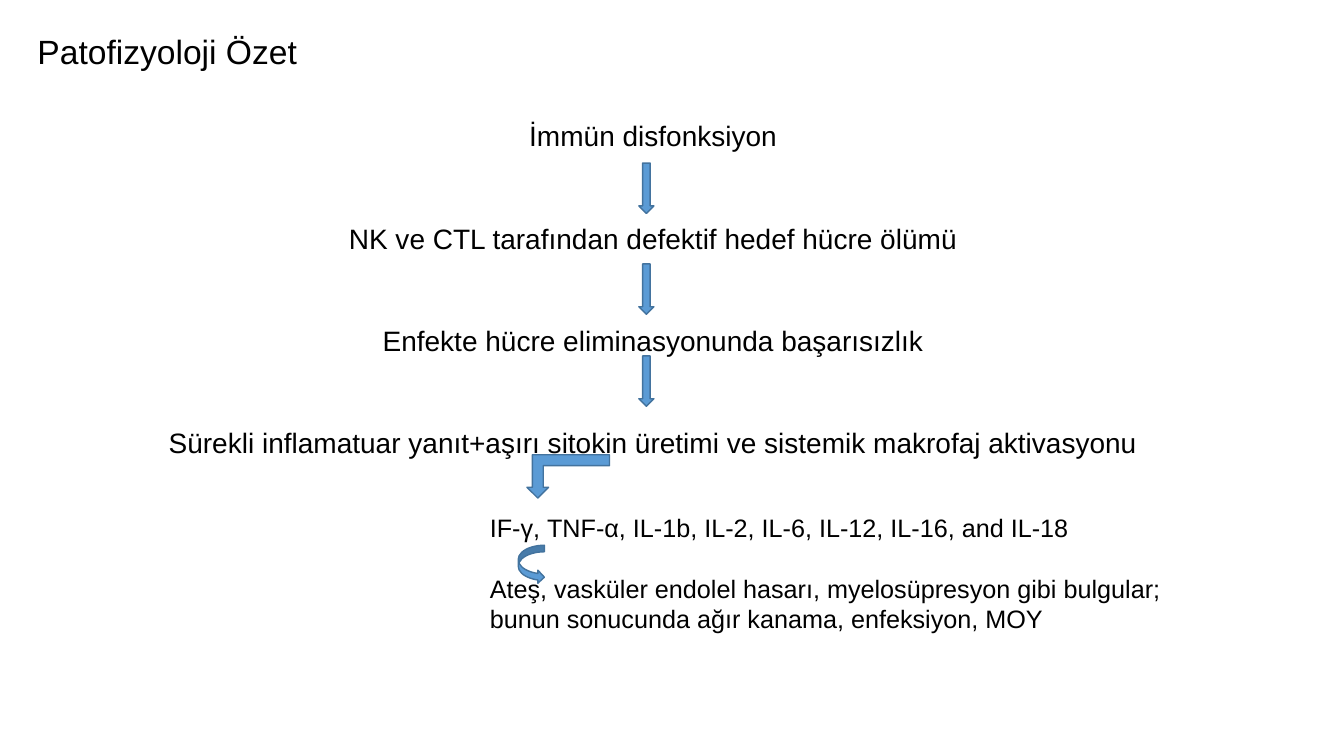
"""Build the pathophysiology summary slide as a chain of steps joined by block arrows."""
import dataclasses

import pptx
import pptx.dml.color
import pptx.enum.shapes
import pptx.enum.text
import pptx.oxml.ns
import pptx.util
from lxml import etree

Cm = pptx.util.Cm
Pt = pptx.util.Pt
RGB = pptx.dml.color.RGBColor
ALIGN = pptx.enum.text.PP_ALIGN
ARROW = pptx.enum.shapes.MSO_SHAPE


@dataclasses.dataclass(frozen=True)
class Theme:
    font: str = "Arial"
    ink: RGB = RGB(0x00, 0x00, 0x00)
    arrow_fill: RGB = RGB(0x5B, 0x9B, 0xD5)
    arrow_line: RGB = RGB(0x43, 0x73, 0x9E)
    title_size: int = 24
    step_size: int = 20
    detail_size: int = 18


theme = Theme()


def write(holder, lines, box, size, align=ALIGN.LEFT, gap=0):
    holder.left, holder.top, holder.width, holder.height = [Cm(v) for v in box]
    frame = holder.text_frame
    frame.text = "\n".join(lines)
    frame.word_wrap = True
    frame.auto_size = pptx.enum.text.MSO_AUTO_SIZE.NONE
    frame.vertical_anchor = pptx.enum.text.MSO_ANCHOR.TOP
    for number, paragraph in enumerate(frame.paragraphs):
        paragraph.alignment = align
        paragraph.space_before = Pt(gap if number else 0)
        paragraph.font.name = theme.font
        paragraph.font.size = Pt(size)
        paragraph.font.color.rgb = theme.ink
        properties = paragraph._p.get_or_add_pPr()
        properties.set("marL", "0")
        properties.set("indent", "0")
        no_bullet = etree.Element(pptx.oxml.ns.qn("a:buNone"))
        properties.insert_element_before(no_bullet, "a:tabLst", "a:defRPr", "a:extLst")


presentation = pptx.Presentation()
presentation.slide_width = Cm(33.87)
presentation.slide_height = Cm(19.05)
slide = presentation.slides.add_slide(presentation.slide_layouts.get_by_name("Two Content"))
heading, steps, findings = slide.placeholders

write(heading, ["Patofizyoloji Özet"], (0.69, 0.64, 31.6, 1.27), theme.title_size)
write(
    steps,
    [
        "İmmün disfonksiyon",
        "NK ve CTL tarafından defektif hedef hücre ölümü",
        "Enfekte hücre eliminasyonunda başarısızlık",
        "Sürekli inflamatuar yanıt+aşırı sitokin üretimi ve sistemik makrofaj aktivasyonu",
    ],
    (0.86, 2.87, 31.2, 9.65),
    theme.step_size,
    align=ALIGN.CENTER,
    gap=49,
)
write(
    findings,
    [
        "IF-γ, TNF-α, IL-1b, IL-2, IL-6, IL-12, IL-16, and IL-18",
        "Ateş, vasküler endolel hasarı, myelosüpresyon gibi bulgular; "
        "bunun sonucunda ağır kanama, enfeksiyon, MOY",
    ],
    (12.09, 12.78, 19.35, 4.11),
    theme.detail_size,
    gap=22,
)

arrows = [(ARROW.DOWN_ARROW, 16.1, top, 0.38, 1.27, 0) for top in (4.11, 6.65, 8.97)]
arrows += [
    (ARROW.BENT_UP_ARROW, 13.28, 11.46, 2.08, 1.09, 180),
    (ARROW.CURVED_RIGHT_ARROW, 13.06, 13.74, 0.66, 0.97, 0),
]
for kind, left, top, width, height, turn in arrows:
    arrow = slide.shapes.add_shape(kind, Cm(left), Cm(top), Cm(width), Cm(height))
    arrow.rotation = turn
    arrow.shadow.inherit = False
    arrow.fill.solid()
    arrow.fill.fore_color.rgb = theme.arrow_fill
    arrow.line.color.rgb = theme.arrow_line
    arrow.line.width = Pt(1)

presentation.save("out.pptx")
